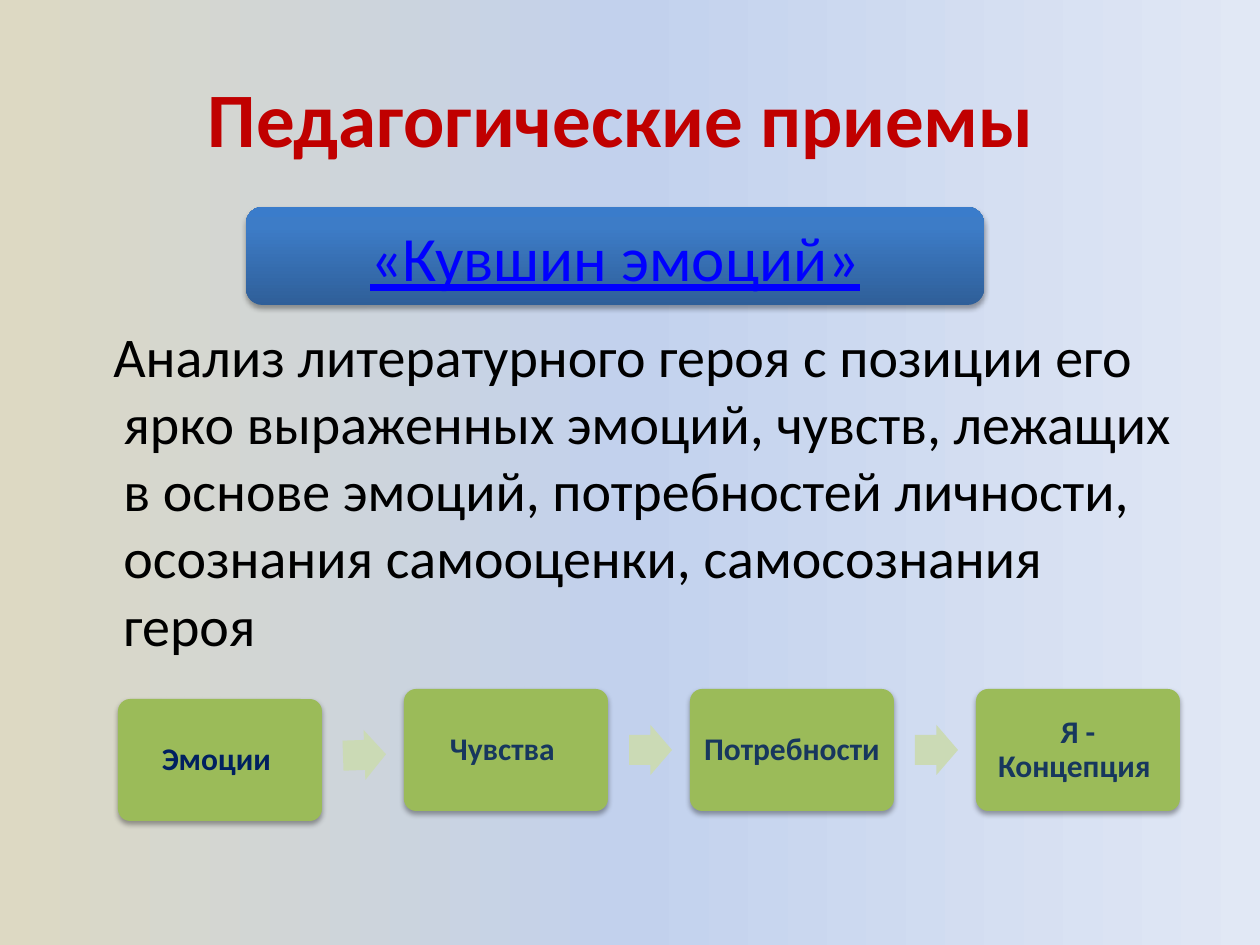
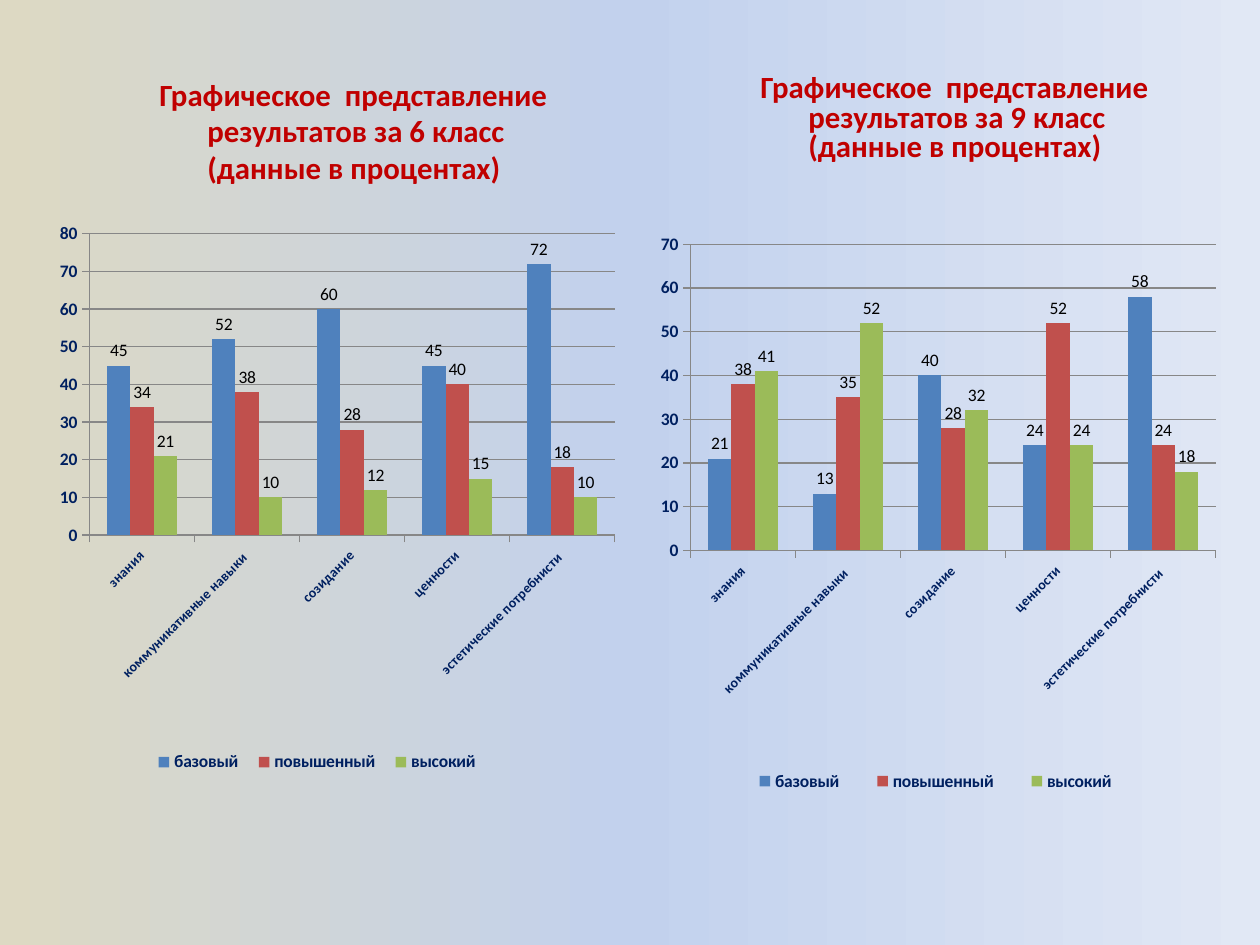
from dataclasses import dataclass

from lxml.etree import SubElement
from pptx import Presentation
from pptx.chart.data import CategoryChartData
from pptx.dml.color import RGBColor
from pptx.enum.chart import XL_CHART_TYPE, XL_LABEL_POSITION, XL_LEGEND_POSITION, XL_TICK_MARK
from pptx.enum.shapes import MSO_SHAPE
from pptx.enum.text import MSO_ANCHOR, PP_ALIGN
from pptx.oxml.ns import qn
from pptx.util import Emu, Pt

PX = 914400 / 126
FONT = "Calibri"
RED = RGBColor(0xC0, 0x00, 0x00)
BLACK = RGBColor(0x00, 0x00, 0x00)
LINK_BLUE = RGBColor(0x00, 0x00, 0xFF)
NAVY = RGBColor(0x00, 0x20, 0x60)
SLATE = RGBColor(0x17, 0x37, 0x5E)
GREEN = RGBColor(0x9B, 0xBB, 0x59)
PALE_GREEN = RGBColor(0xCB, 0xDA, 0xB5)
BAR_BLUE = RGBColor(0x4F, 0x81, 0xBD)
BAR_RED = RGBColor(0xC0, 0x50, 0x4D)
GRID_GREY = RGBColor(0x87, 0x87, 0x87)
SKY = [
    (0, RGBColor(0xDD, 0xD9, 0xC3)),
    (50, RGBColor(0xC2, 0xD1, 0xED)),
    (100, RGBColor(0xE1, 0xE8, 0xF5)),
]
BUTTON = [
    (0, RGBColor(0x2F, 0x5F, 0x99)),
    (80, RGBColor(0x3D, 0x7C, 0xC7)),
    (100, RGBColor(0x3A, 0x7C, 0xCB)),
]


@dataclass(frozen=True)
class Box:
    left: int
    top: int
    width: int
    height: int

    def emu(self) -> list[Emu]:
        return [px(n) for n in (self.left, self.top, self.width, self.height)]


@dataclass(frozen=True)
class Style:
    size: float
    color: RGBColor
    bold: bool = False
    underline: bool = False
    align: PP_ALIGN = PP_ALIGN.LEFT
    anchor: MSO_ANCHOR = MSO_ANCHOR.TOP
    spacing: float = 1.0
    margin: int = 0
    indent: int = 0


@dataclass(frozen=True)
class Step:
    label: str
    color: RGBColor
    drop: int = 0
    tilt: int = 0


@dataclass(frozen=True)
class Results:
    grade: int
    heading: Box
    spacing: float
    area: Box
    top_value: int
    legend_left: float
    legend_width: float
    scores: tuple[tuple[int, ...], ...]


LEVELS = [("базовый ", BAR_BLUE), ("повышенный ", BAR_RED), ("высокий ", GREEN)]
SKILLS = ["знания", "коммуникативные навыки ", "созидание", "ценности", "эстетические потребнисти "]
STEPS = [
    Step("Эмоции ", NAVY, 10, 358),
    Step("Чувства ", SLATE),
    Step("Потребности ", SLATE),
    Step("Я - Концепция ", SLATE),
]
RESULTS = [
    Results(6, Box(147, 69, 438, 118), 1.0, Box(49, 207, 581, 610), 80, 0.17, 0.59,
            ((45, 52, 60, 45, 72), (34, 38, 28, 40, 18), (21, 10, 12, 15, 10))),
    Results(9, Box(748, 69, 438, 128), 0.8, Box(650, 217, 581, 620), 70, 0.14, 0.71,
            ((21, 13, 40, 24, 58), (38, 35, 28, 52, 24), (41, 52, 32, 24, 18))),
]


def px(count: float) -> Emu:
    return Emu(round(count * PX))


def fill_gradient(owner, fill, stops, degrees: int) -> None:
    fill.gradient()
    stop_list = owner.element.find(".//" + qn("a:gsLst"))
    for stop in list(stop_list):
        stop_list.remove(stop)
    for percent, color in stops:
        stop = SubElement(stop_list, qn("a:gs"), pos=str(percent * 1000))
        SubElement(stop, qn("a:srgbClr"), val=str(color))
    stop_list.getparent().find(qn("a:lin")).set("ang", str(degrees * 60000))


def write(frame, text: str, style: Style) -> None:
    frame.word_wrap = True
    frame.vertical_anchor = style.anchor
    frame.text = text
    paragraph = frame.paragraphs[0]
    paragraph.alignment = style.align
    paragraph.line_spacing = style.spacing
    if style.margin:
        properties = paragraph.runs[0].font._element.getparent().getparent().get_or_add_pPr()
        properties.set("marL", str(px(style.margin)))
        properties.set("indent", str(px(style.indent)))
    font = paragraph.runs[0].font
    font.name = FONT
    font.size = Pt(style.size)
    font.bold = style.bold
    font.underline = style.underline
    font.color.rgb = style.color


def add_text(slide, box: Box, text: str, style: Style) -> None:
    write(slide.shapes.add_textbox(*box.emu()).text_frame, text, style)


def add_plain_shape(slide, kind: MSO_SHAPE, box: Box, color: RGBColor):
    shape = slide.shapes.add_shape(kind, *box.emu())
    shape.shadow.inherit = False
    shape.fill.solid()
    shape.fill.fore_color.rgb = color
    shape.line.fill.background()
    return shape


def add_card(slide, box: Box, color: RGBColor, text: str, style: Style):
    card = add_plain_shape(slide, MSO_SHAPE.ROUNDED_RECTANGLE, box, color)
    effects = card.element.spPr.find(qn("a:effectLst"))
    shadow = SubElement(effects, qn("a:outerShdw"), blurRad=str(Pt(3.1)), dist=str(Pt(1.8)),
                        dir="5400000", rotWithShape="0")
    black = SubElement(shadow, qn("a:srgbClr"), val=str(BLACK))
    SubElement(black, qn("a:alpha"), val="35000")
    write(card.text_frame, text, style)
    return card


def add_steps(slide) -> None:
    for index, step in enumerate(STEPS):
        left = 118 + index * 286
        label = Style(18, step.color, bold=True, align=PP_ALIGN.CENTER,
                      anchor=MSO_ANCHOR.MIDDLE, spacing=0.9)
        card = add_card(slide, Box(left, 689 + step.drop, 204, 122), GREEN, step.label, label)
        card.adjustments[0] = 0.1
        frame = card.text_frame
        frame.margin_left = frame.margin_right = frame.margin_top = frame.margin_bottom = px(9)
        if index < len(STEPS) - 1:
            arrow_box = Box(left + 225, 725 + step.drop // 2, 43, 50)
            arrow = add_plain_shape(slide, MSO_SHAPE.RIGHT_ARROW, arrow_box, PALE_GREEN)
            arrow.adjustments[0] = 0.6
            arrow.rotation = step.tilt


def set_layout(parent, position: int, left: float, top: float, width: float, height: float,
               inner: bool = False) -> None:
    for previous in parent.findall(qn("c:layout")):
        parent.remove(previous)
    layout = SubElement(parent, qn("c:layout"))
    parent.insert(position, layout)
    manual = SubElement(layout, qn("c:manualLayout"))
    if inner:
        SubElement(manual, qn("c:layoutTarget"), val="inner")
    for mode in ("xMode", "yMode"):
        SubElement(manual, qn("c:" + mode), val="edge")
    for side, share in zip("xywh", (left, top, width, height)):
        SubElement(manual, qn("c:" + side), val=str(share))


def set_chart_font(font, size: float, color: RGBColor, bold: bool) -> None:
    font.name = FONT
    font.size = Pt(size)
    font.bold = bold
    font.color.rgb = color


def add_results(slide, results: Results) -> None:
    heading = f"Графическое  представление результатов за {results.grade} класс (данные в процентах)"
    add_text(slide, results.heading, heading,
             Style(17.6, RED, bold=True, spacing=results.spacing, margin=48, indent=-48))

    data = CategoryChartData()
    data.categories = SKILLS
    for (level, _), scores in zip(LEVELS, results.scores):
        data.add_series(level, scores)
    chart = slide.shapes.add_chart(XL_CHART_TYPE.COLUMN_CLUSTERED, *results.area.emu(), data).chart
    chart.has_title = False
    set_chart_font(chart.font, 10, BLACK, False)

    plot = chart.plots[0]
    plot.vary_by_categories = False
    plot.gap_width = 150
    plot.overlap = 0
    for series, (_, color) in zip(plot.series, LEVELS):
        series.format.fill.solid()
        series.format.fill.fore_color.rgb = color
        labels = series.data_labels
        labels.show_value = True
        labels.position = XL_LABEL_POSITION.OUTSIDE_END
        set_chart_font(labels.font, 10, BLACK, False)

    skill_axis, score_axis = chart.category_axis, chart.value_axis
    score_axis.minimum_scale = 0
    score_axis.maximum_scale = results.top_value
    score_axis.major_unit = 10
    score_axis.has_major_gridlines = True
    for axis, size in ((skill_axis, 8), (score_axis, 10)):
        axis.major_tick_mark = XL_TICK_MARK.OUTSIDE
        set_chart_font(axis.tick_labels.font, size, NAVY, True)
    for grey_line in (skill_axis.format.line, score_axis.format.line,
                      score_axis.major_gridlines.format.line):
        grey_line.color.rgb = GRID_GREY
        grey_line.width = Pt(0.75)
    skill_axis._element.find(".//" + qn("a:bodyPr")).set("rot", "-2700000")

    chart.has_legend = True
    chart.legend.position = XL_LEGEND_POSITION.BOTTOM
    chart.legend.include_in_layout = False
    set_chart_font(chart.legend.font, 10, NAVY, True)
    set_layout(chart.element.find(".//" + qn("c:plotArea")), 0, 0.07, 0.044, 0.904, 0.494, inner=True)
    set_layout(chart.element.find(".//" + qn("c:legend")), 1,
               results.legend_left, 0.88, results.legend_width, 0.06)


def add_techniques_slide(deck) -> None:
    slide = deck.slides.add_slide(deck.slide_layouts[6])
    add_text(slide, Box(63, 38, 1134, 157), "Педагогические приемы ",
             Style(44, RED, bold=True, align=PP_ALIGN.CENTER, anchor=MSO_ANCHOR.MIDDLE))
    add_text(slide, Box(63, 315, 1134, 384),
             "Анализ литературного героя с позиции его ярко выраженных эмоций, чувств, лежащих "
             "в основе эмоций, потребностей личности, осознания самооценки, самосознания героя",
             Style(32, BLACK, margin=48, indent=-10))
    button = add_card(slide, Box(246, 207, 738, 98), BAR_BLUE, "«Кувшин эмоций»",
                      Style(36, LINK_BLUE, underline=True, align=PP_ALIGN.CENTER,
                            anchor=MSO_ANCHOR.MIDDLE))
    fill_gradient(button, button.fill, BUTTON, 270)
    add_steps(slide)


def add_results_slide(deck) -> None:
    slide = deck.slides.add_slide(deck.slide_layouts[6])
    for results in RESULTS:
        add_results(slide, results)


def main() -> None:
    deck = Presentation()
    deck.slide_width, deck.slide_height = px(1260), px(945)
    master = deck.slide_master
    fill_gradient(master, master.background.fill, SKY, 0)
    add_techniques_slide(deck)
    add_results_slide(deck)
    deck.save("out.pptx")


if __name__ == "__main__":
    main()
